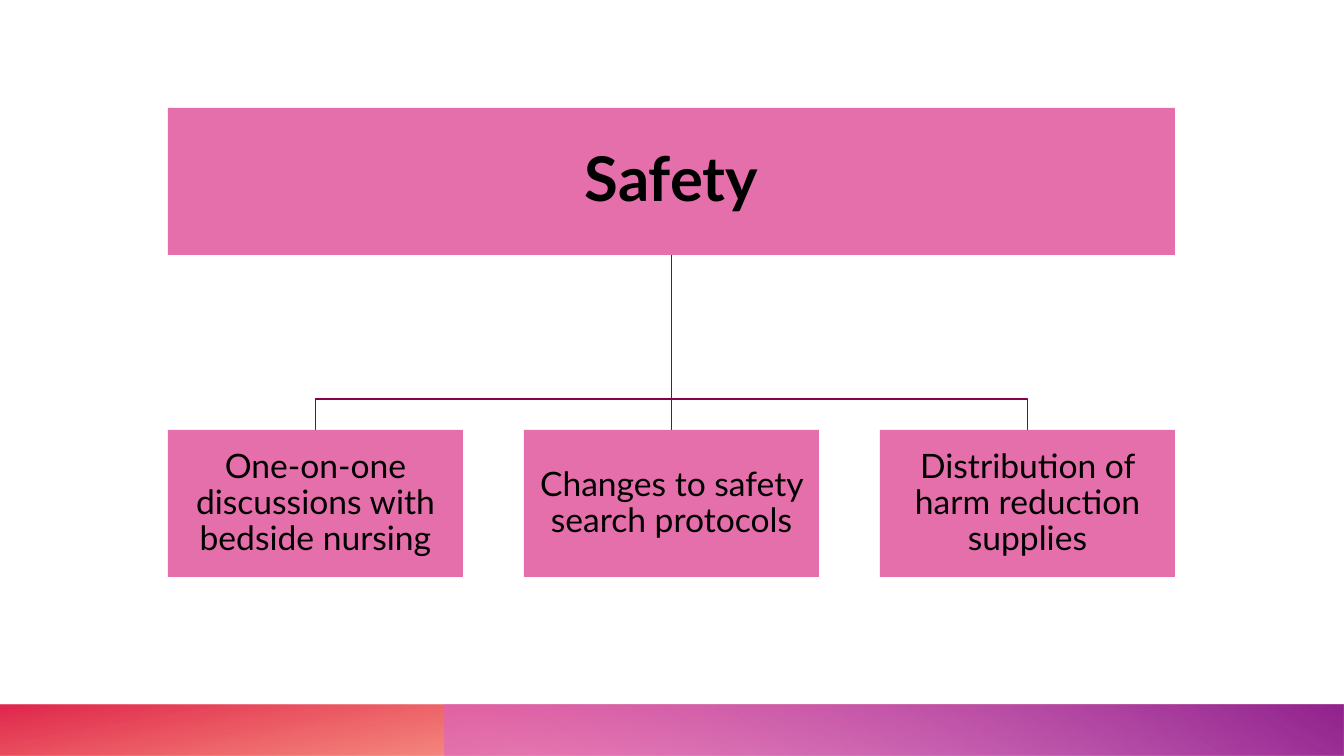
from dataclasses import dataclass

from lxml import etree
from pptx import Presentation
from pptx import util as u
from pptx.dml.color import RGBColor
from pptx.enum import shapes, text
from pptx.oxml import parse_xml
from pptx.oxml.ns import nsdecls, qn

SCALE = 914400 / 100.8


@dataclass(frozen=True)
class Theme:
    """Colours, font and type sizes of the slide."""
    box: str = "E56FAB"
    line: str = "85024A"
    ink: str = "000000"
    font: str = "Lato"
    head: int = 44
    body: int = 24
    warm: tuple = ((0, "DA002F", 85), (86, "FE4A00", 28))
    cool: tuple = ((9, "D861D4", 55), (99, "92248E", 100))


THEME = Theme()


def px(n):
    """Turn pixels into EMU."""
    return u.Emu(round(n * SCALE))


def add_rect(slide, x, y, w, h):
    """Add a plain rectangle without line or shadow."""
    rect = slide.shapes.add_shape(
        shapes.MSO_SHAPE.RECTANGLE, px(x), px(y), px(w), px(h))
    rect.shadow.inherit = False
    rect.line.fill.background()
    return rect


def add_band(slide, x, w, stops, angle):
    """Add a footer band with a translucent gradient."""
    band = add_rect(slide, x, 705, w, 51)
    marks = "".join(
        f'<a:gs pos="{pos * 1000}"><a:srgbClr val="{color}">'
        f'<a:alpha val="{alpha * 1000}"/></a:srgbClr></a:gs>'
        for pos, color, alpha in stops)
    fill = parse_xml(
        f'<a:gradFill {nsdecls("a")}><a:gsLst>{marks}</a:gsLst>'
        f'<a:lin ang="{angle * 60000}" scaled="0"/></a:gradFill>')
    band.element.spPr.find(qn("a:prstGeom")).addnext(fill)


def add_box(slide, x, y, w, h, words, size, inset, bold=False):
    """Add a filled box with centred text."""
    box = add_rect(slide, x, y, w, h)
    box.fill.solid()
    box.fill.fore_color.rgb = RGBColor.from_string(THEME.box)
    frame = box.text_frame
    frame.word_wrap = True
    frame.vertical_anchor = text.MSO_ANCHOR.MIDDLE
    frame.margin_left = frame.margin_right = px(inset)
    frame.margin_top = frame.margin_bottom = px(inset)
    para = frame.paragraphs[0]
    para.text = words
    para.alignment = text.PP_ALIGN.CENTER
    para.line_spacing = 0.9
    font = para.font
    font.name, font.size, font.bold = THEME.font, u.Pt(size), bold
    font.color.rgb = RGBColor.from_string(THEME.ink)


def style_line(line):
    """Give a branch its colour and width."""
    line.color.rgb = RGBColor.from_string(THEME.line)
    line.width = u.Pt(1)


def add_branch(slide, start, end, bend):
    """Link two points, turning at the bend height if they are not aligned."""
    (x1, y1), (x2, y2) = start, end
    if x1 == x2:
        link = slide.shapes.add_connector(
            shapes.MSO_CONNECTOR.STRAIGHT, px(x1), px(y1), px(x2), px(y2))
        etree.SubElement(link.element.spPr, qn("a:effectLst"))
    else:
        pen = slide.shapes.build_freeform(px(x1), px(y1))
        turns = [(x1, bend), (x2, bend), end]
        pen.add_line_segments([(px(x), px(y)) for x, y in turns], close=False)
        link = pen.convert_to_shape()
        link.shadow.inherit = False
        link.fill.background()
    style_line(link.line)


def main():
    """Build the slide and save it."""
    deck = Presentation()
    deck.slide_width, deck.slide_height = px(1344), px(756)
    slide = deck.slides.add_slide(deck.slide_layouts[6])
    add_band(slide, 0, 1344, THEME.warm, 80)
    add_band(slide, 445, 899, THEME.cool, 300)

    left, top, high, wide, step, row = 168, 108, 147, 295, 356, 430
    span = 2 * step + wide
    topics = ["One-on-one discussions with bedside nursing",
              "Changes to safety search protocols",
              "Distribution of harm reduction supplies"]
    root = (left + span / 2, top + high)
    places = [left + i * step for i in range(len(topics))]
    for x in places:
        add_branch(slide, root, (x + wide / 2, row), 399)
    add_box(slide, left, top, span, high, "Safety", THEME.head, 3, True)
    for x, topic in zip(places, topics):
        add_box(slide, x, row, wide, high, topic, THEME.body, 2)
    deck.save("out.pptx")


if __name__ == "__main__":
    main()
